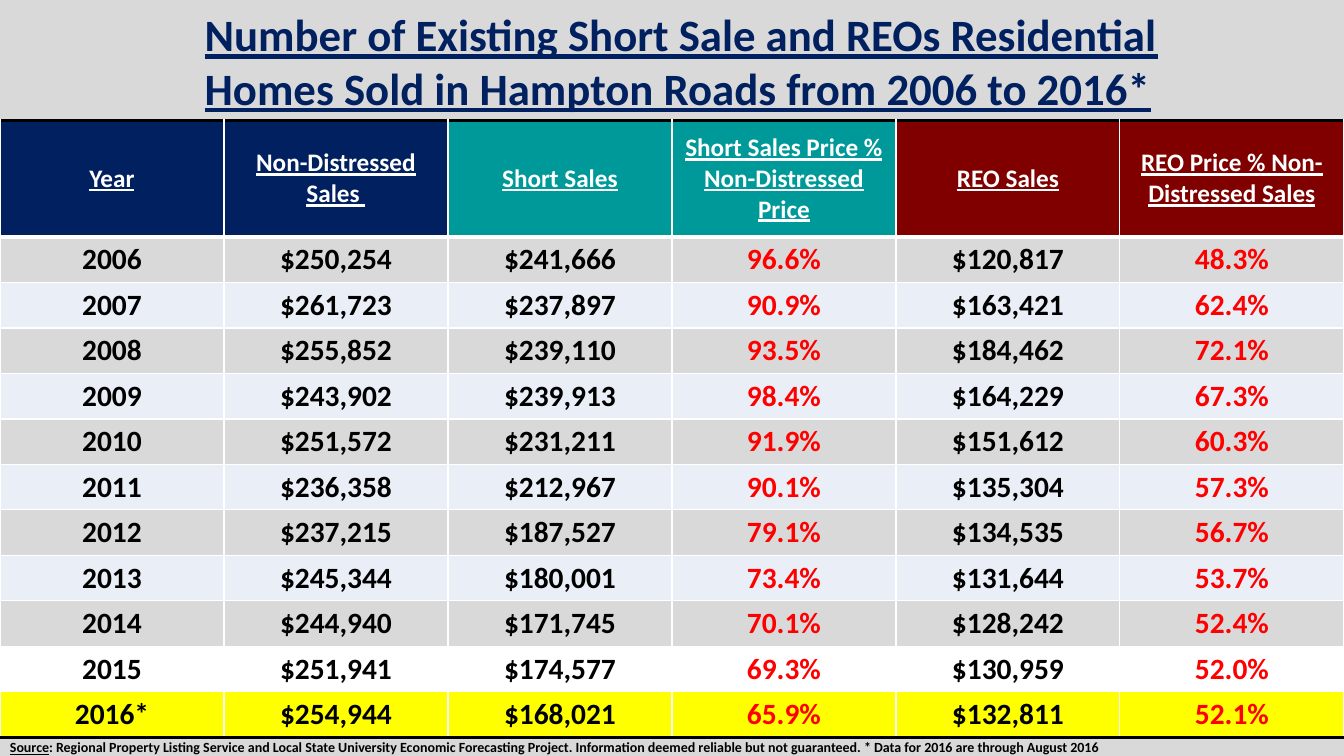
from pptx import Presentation
from pptx.dml.color import RGBColor
from pptx.enum.text import MSO_ANCHOR, MSO_AUTO_SIZE, PP_ALIGN
from pptx.oxml import parse_xml
from pptx.oxml.ns import nsdecls
from pptx.util import Pt


def color(value):
    return RGBColor.from_string(value)


def add_run(paragraph, text, size, font_color, underline=False):
    run = paragraph.add_run()
    run.text = text
    run.font.name = "Calibri"
    run.font.size = Pt(size)
    run.font.bold = True
    run.font.underline = underline
    run.font.color.rgb = color(font_color)


headers = ["Year", "Non-Distressed Sales ", "Short Sales",
           "Short Sales Price % Non-Distressed Price", "REO Sales",
           "REO Price % Non-Distressed Sales"]
header_fills = ["002060", "002060", "009999", "009999", "800000", "800000"]
sales = [
    ["2006", "$250,254", "$241,666", "96.6%", "$120,817", "48.3%"],
    ["2007", "$261,723", "$237,897", "90.9%", "$163,421", "62.4%"],
    ["2008", "$255,852", "$239,110", "93.5%", "$184,462", "72.1%"],
    ["2009", "$243,902", "$239,913", "98.4%", "$164,229", "67.3%"],
    ["2010", "$251,572", "$231,211", "91.9%", "$151,612", "60.3%"],
    ["2011", "$236,358", "$212,967", "90.1%", "$135,304", "57.3%"],
    ["2012", "$237,215", "$187,527", "79.1%", "$134,535", "56.7%"],
    ["2013", "$245,344", "$180,001", "73.4%", "$131,644", "53.7%"],
    ["2014", "$244,940", "$171,745", "70.1%", "$128,242", "52.4%"],
    ["2015", "$251,941", "$174,577", "69.3%", "$130,959", "52.0%"],
    ["2016*", "$254,944", "$168,021", "65.9%", "$132,811", "52.1%"],
]
row_fills = ["D9D9D9", "EAEFF7"] * 4 + ["D9D9D9", "FFFFFF", "FFFF00"]

presentation = Presentation()
presentation.slide_width = Pt(960)
presentation.slide_height = Pt(540)
slide = presentation.slides.add_slide(presentation.slide_layouts[5])
slide.background.fill.solid()
slide.background.fill.fore_color.rgb = color("D9D9D9")

title = slide.shapes.title
title.left, title.top, title.width, title.height = Pt(139), Pt(1.5), Pt(723.5), Pt(85)
title.text_frame.auto_size = MSO_AUTO_SIZE.NONE
title.text_frame.vertical_anchor = MSO_ANCHOR.TOP
paragraph = title.text_frame.paragraphs[0]
paragraph.alignment = PP_ALIGN.LEFT
add_run(paragraph, "Number of Existing Short Sale and REOs Residential "
        "Homes Sold in Hampton Roads from 2006 to 2016*", 32, "002060", True)

rows = [headers] + sales
last_row = len(rows) - 1
table = slide.shapes.add_table(len(rows), len(headers), Pt(0), Pt(86),
                               Pt(960), Pt(440.8)).table
for column in table.columns:
    column.width = Pt(160)
for row_index, values in enumerate(rows):
    is_header = row_index == 0
    table.rows[row_index].height = Pt(83.3 if is_header else 32.5)
    top = {0: ("000000", 2.25), 1: ("FFFFFF", 3)}.get(row_index, ("FFFFFF", 1))
    bottom = {0: ("FFFFFF", 3), last_row: ("000000", 2.25)}.get(row_index, ("FFFFFF", 1))
    borders = {"L": ("FFFFFF", 1), "R": ("FFFFFF", 1), "T": top, "B": bottom}
    for column_index, value in enumerate(values):
        cell = table.cell(row_index, column_index)
        cell.vertical_anchor = MSO_ANCHOR.MIDDLE
        cell.margin_top = cell.margin_bottom = Pt(3)
        properties = cell._tc.get_or_add_tcPr()
        for side, (line_color, width) in borders.items():
            properties.append(parse_xml(
                f'<a:ln{side} {nsdecls("a")} w="{Pt(width)}"><a:solidFill>'
                f'<a:srgbClr val="{line_color}"/></a:solidFill></a:ln{side}>'))
        cell.fill.solid()
        cell.fill.fore_color.rgb = color(
            header_fills[column_index] if is_header else row_fills[row_index - 1])
        paragraph = cell.text_frame.paragraphs[0]
        paragraph.alignment = PP_ALIGN.CENTER
        if is_header:
            add_run(paragraph, value, 18, "FFFFFF", True)
        else:
            add_run(paragraph, value, 21, "FF0000" if value.endswith("%") else "000000")

source = slide.shapes.add_textbox(Pt(0), Pt(524.2), Pt(871), Pt(19.4))
source.text_frame.word_wrap = True
paragraph = source.text_frame.paragraphs[0]
add_run(paragraph, "Source", 10, "000000", True)
add_run(paragraph, ": Regional Property Listing Service and Local State University "
        "Economic Forecasting Project. Information deemed reliable but not guaranteed. "
        "* Data for 2016 are through August 2016", 10, "000000")

presentation.save("out.pptx")
